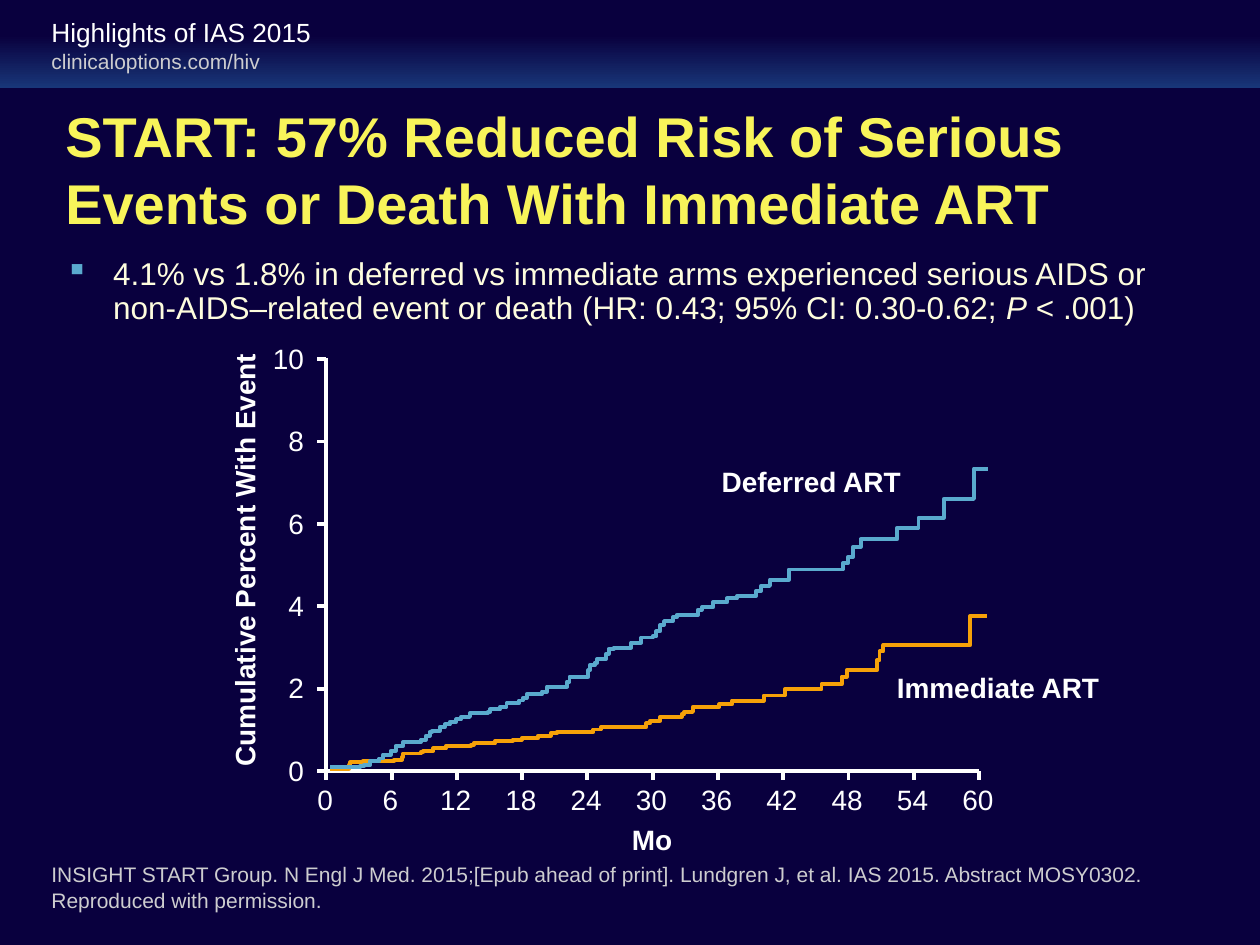
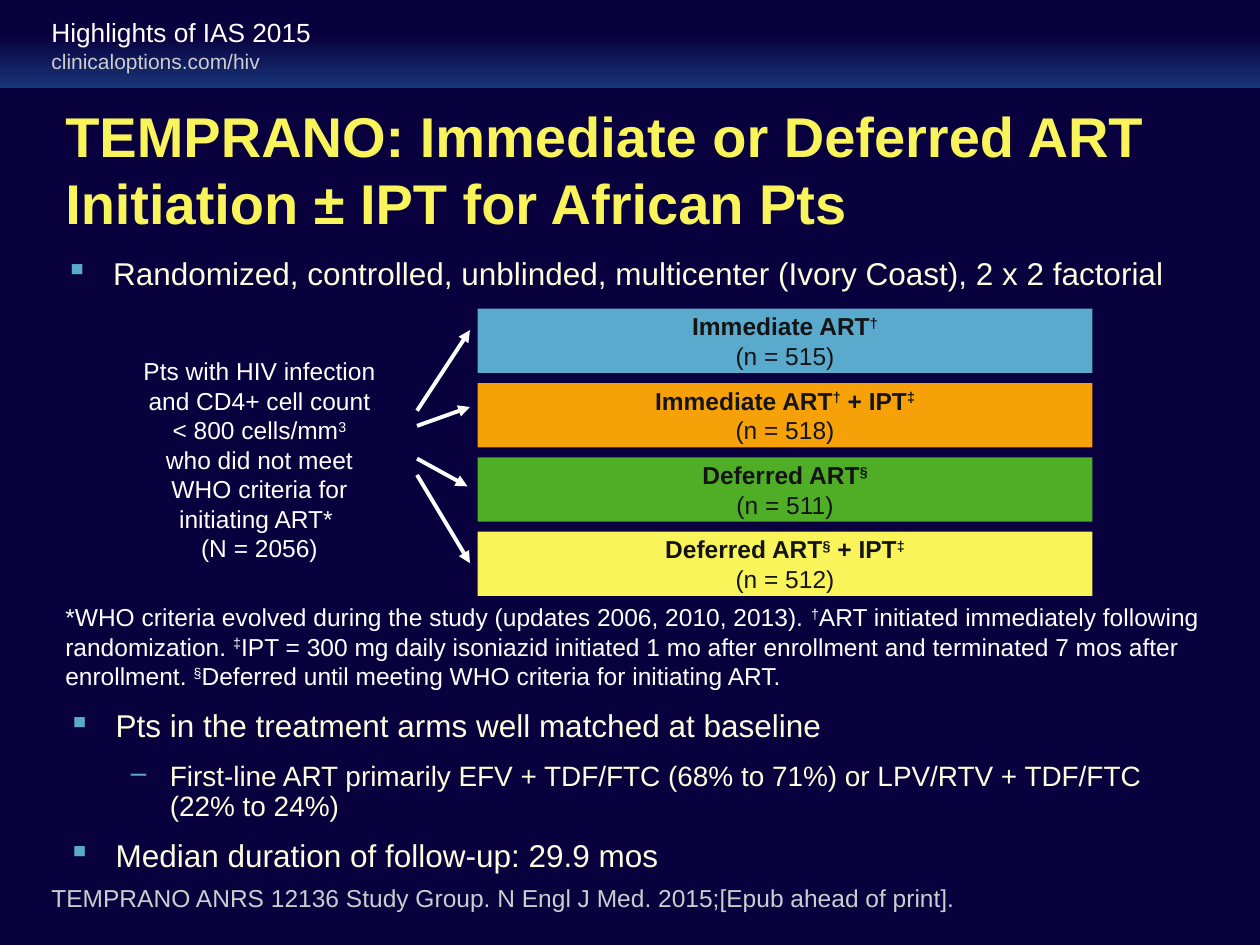
from typing import NamedTuple

from lxml import etree
from pptx import Presentation
from pptx.dml.color import RGBColor
from pptx.enum.shapes import MSO_CONNECTOR, MSO_SHAPE
from pptx.enum.text import MSO_ANCHOR, PP_ALIGN
from pptx.oxml.ns import qn
from pptx.util import Inches, Pt

# Slide grid: 100 columns by 75 rows
WIDTH, HEIGHT = Inches(10), Inches(7.5)
COLUMN, ROW = WIDTH // 100, HEIGHT // 75

FONT = "Arial"
NAVY = RGBColor(0x09, 0x00, 0x3E)
BAND_BLUE = RGBColor(0x18, 0x36, 0x78)
WHITE = RGBColor(0xFF, 0xFF, 0xFF)
CREAM = RGBColor(0xFE, 0xFD, 0xDE)
GRAY = RGBColor(0xCD, 0xCD, 0xCF)
INK = RGBColor(0x14, 0x14, 0x15)
YELLOW = RGBColor(0xF8, 0xF4, 0x5A)
BLUE = RGBColor(0x5A, 0xAA, 0xCE)
ORANGE = RGBColor(0xF6, 0xA1, 0x08)
GREEN = RGBColor(0x4F, 0xAD, 0x26)

LEFT, CENTER, RIGHT = PP_ALIGN.LEFT, PP_ALIGN.CENTER, PP_ALIGN.RIGHT
TOP, MIDDLE, BOTTOM = MSO_ANCHOR.TOP, MSO_ANCHOR.MIDDLE, MSO_ANCHOR.BOTTOM
STRAIGHT, RECTANGLE = MSO_CONNECTOR.STRAIGHT, MSO_SHAPE.RECTANGLE
LINE_WIDTH = Pt(2.25)

# Per bullet level: sign, size, text indent and hanging indent in inches
BULLETS = [("▪", 18, 0.38, -0.38), ("–", 16, 0.81, -0.31)]

# Steps of each curve: hundredths of an inch right of and above the axis origin
IMMEDIATE_STEPS = [
    (3, 2), (18, 5), (19, 7), (29, 8), (54, 9), (60, 11), (61, 14), (75, 15),
    (77, 16), (85, 18), (95, 20), (115, 21), (117, 22), (134, 24), (148, 25),
    (155, 26), (168, 28), (178, 30), (183, 31), (212, 33), (218, 35), (254, 38),
    (257, 40), (265, 43), (282, 45), (284, 47), (291, 51), (312, 53), (322, 56),
    (347, 60), (364, 65), (393, 69), (409, 75), (413, 80), (437, 88), (439, 95),
    (442, 100), (511, 123), (524, 123)]
DEFERRED_STEPS = [
    (3, 3), (27, 4), (30, 5), (35, 8), (42, 10), (45, 13), (51, 16), (55, 20),
    (61, 23), (75, 25), (79, 28), (82, 31), (84, 32), (90, 35), (94, 37),
    (98, 39), (103, 41), (107, 43), (114, 46), (128, 47), (130, 49), (138, 51),
    (143, 54), (153, 56), (156, 58), (159, 61), (171, 63), (175, 67), (191, 71),
    (193, 75), (208, 80), (209, 84), (213, 86), (215, 89), (222, 93), (224, 97),
    (228, 98), (242, 102), (250, 106), (259, 107), (262, 111), (265, 116),
    (268, 119), (275, 122), (278, 124), (295, 128), (298, 130), (307, 134),
    (318, 137), (326, 139), (341, 143), (345, 147), (352, 152), (367, 160),
    (410, 165), (414, 170), (418, 178), (424, 184), (453, 193), (470, 201),
    (490, 216), (514, 240), (525, 240)]


class Box(NamedTuple):
    """A region in columns and rows of the slide grid."""
    left: float
    top: float
    width: float
    height: float

    def region(self, across, down, width, height):
        return Box(self.left + across, self.top + down, width, height)

    def lengths(self):
        return (round(self.left * COLUMN), round(self.top * ROW),
                round(self.width * COLUMN), round(self.height * ROW))


# Text and line helpers
def style(font, size, color, bold=False):
    font.name, font.size, font.bold = FONT, Pt(size), bold
    font.color.rgb = color


def write_runs(para, spans):
    """Spans are (text, marks): b bold, i italic, ^ raised, / line break after."""
    for text, marks in [(spans, "")] if isinstance(spans, str) else spans:
        run = para.add_run()
        run.text = text
        if "b" in marks:
            run.font.bold = True
        if "i" in marks:
            run.font.italic = True
        if "^" in marks:
            run._r.get_or_add_rPr().set("baseline", "30000")
        if "/" in marks:
            para.add_line_break()


def fill_frame(frame, paragraphs, size, color, bold=False, align=LEFT,
               anchor=TOP, wrap=True):
    frame.word_wrap, frame.vertical_anchor = wrap, anchor
    for index, spans in enumerate(paragraphs):
        para = frame.add_paragraph() if index else frame.paragraphs[0]
        para.alignment = align
        style(para.font, size, color, bold)
        write_runs(para, spans)


def add_text(page, box, paragraphs, size, color, **options):
    text_box = page.shapes.add_textbox(*box.lengths())
    fill_frame(text_box.text_frame, paragraphs, size, color, **options)
    return text_box


def add_label(page, box, text, align=CENTER, bold=True):
    return add_text(page, box, [text], 16, WHITE, bold=bold, align=align, wrap=False)


def add_bullets(page, box, items):
    """Items are (level, spans)."""
    frame = page.shapes.add_textbox(*box.lengths()).text_frame
    frame.word_wrap = True
    for index, (level, spans) in enumerate(items):
        sign, size, indent, hanging = BULLETS[level]
        para = frame.add_paragraph() if index else frame.paragraphs[0]
        para.level, para.line_spacing = level, 0.9
        if index:
            para.space_before = Pt(10)
        properties = para._p.get_or_add_pPr()
        properties.set("marL", str(Inches(indent)))
        properties.set("indent", str(Inches(hanging)))
        bullet_color = etree.SubElement(properties, qn("a:buClr"))
        etree.SubElement(bullet_color, qn("a:srgbClr")).set("val", str(BLUE))
        etree.SubElement(properties, qn("a:buChar")).set("char", sign)
        style(para.font, size, CREAM)
        write_runs(para, spans)


def add_line(page, start, end, arrow=False):
    (x1, y1), (x2, y2) = start, end
    line = page.shapes.add_connector(STRAIGHT, round(x1 * COLUMN), round(y1 * ROW),
                                     round(x2 * COLUMN), round(y2 * ROW))
    line.line.color.rgb, line.line.width = WHITE, LINE_WIDTH
    properties = line._element.spPr
    etree.SubElement(properties, qn("a:effectLst"))
    if arrow:
        etree.SubElement(properties.find(qn("a:ln")), qn("a:tailEnd")).set("type", "triangle")


def add_block(page, box):
    block = page.shapes.add_shape(RECTANGLE, *box.lengths())
    block.shadow.inherit = False
    block.line.fill.background()
    return block


# Elements shared by every slide
def add_page(deck, title):
    page = deck.slides.add_slide(deck.slide_layouts[6])
    add_header(page, Box(0, 0, 100, 7))
    add_text(page, Box(4.2, 7.3, 92.6, 12.1), [title], 32, YELLOW, bold=True, anchor=MIDDLE)
    return page


def add_header(page, box):
    band = add_block(page, box)
    band.fill.gradient()
    band.fill.gradient_angle = 90
    for stop, position, color in zip(band.fill.gradient_stops, (0, 0.6), (BAND_BLUE, NAVY)):
        stop.position, stop.color.rgb = position, color
    add_text(page, box.region(3.1, 3.4, 18.7, 3), ["clinicaloptions.com/hiv"], 12, GRAY, wrap=False)
    add_text(page, box.region(3.1, 0.8, 78.4, 3.5), ["Highlights of IAS 2015"], 15, WHITE)


def add_citation(page, text, size, height):
    add_text(page, Box(3.1, 72.9 - height, 93.6, height), [text], size, GRAY, anchor=BOTTOM)


# Event plot: axes, ticks, labels and step curves
def add_curve(page, box, steps, color):
    (start_x, start_y), *rest = steps
    builder = page.shapes.build_freeform(start_x, -start_y, scale=COLUMN / 10)
    points, height = [], start_y
    for across, new_height in rest:
        points += [(across, -height), (across, -new_height)]
        height = new_height
    builder.add_line_segments(points, close=False)
    curve = builder.convert_to_shape(round(box.left * COLUMN),
                                     round((box.top + box.height) * ROW))
    curve.shadow.inherit = False
    curve.fill.background()
    curve.line.color.rgb, curve.line.width = color, LINE_WIDTH


def add_event_plot(page, box):
    left, bottom = box.left, box.top + box.height
    add_line(page, (left, box.top - 0.1), (left, bottom + 0.1))
    add_line(page, (left, bottom), (left + box.width, bottom))
    for percent in range(0, 11, 2):
        rise = box.height * (1 - percent / 10)
        add_line(page, (left - 0.7, box.top + rise), (left, box.top + rise))
        width = 4.5 if percent > 9 else 3.3
        add_label(page, box.region(-0.8 - width, rise - 1.9, width, 3.7), str(percent), RIGHT, False)
    for month in range(0, 61, 6):
        shift = box.width * month / 60
        add_line(page, (left + shift, bottom), (left + shift, bottom + 0.7))
        width = 4.5 if month > 9 else 3.3
        add_label(page, box.region(shift - 0.1 - width / 2, box.height + 0.4, width, 3.7),
                  str(month), bold=False)
    axis_title = add_label(page, box.region(-24.1, 14.1, 35.2, 3.7), "Cumulative Percent With Event")
    axis_title.rotation = 270
    add_label(page, box.region(23.2, 36.3, 5.3, 3.7), "Mo")
    add_label(page, box.region(30.4, 7.9, 16.4, 3.7), "Deferred ART", LEFT)
    add_label(page, box.region(44.3, 24.2, 18.3, 3.7), "Immediate ART", LEFT)
    add_curve(page, box, IMMEDIATE_STEPS, ORANGE)
    add_curve(page, box, DEFERRED_STEPS, BLUE)


# Trial design: population, arrows and four arms
def add_trial_arms(page, box):
    population = [[("Pts with HIV infection and CD4+ cell count < 800 cells/mm", ""), ("3", "^")],
                  "who did not meet WHO criteria for initiating ART* ", "(N = 2056)"]
    add_text(page, box.region(0, 3.3, 21, 17.5), population, 14, WHITE, align=CENTER)
    ipt = [(" + IPT", "b"), ("‡", "b^/")]
    arms = [
        (BLUE, [("Immediate ART", "b"), ("†", "b^/")], 515),
        (ORANGE, [("Immediate ART", "b"), ("†", "b^"), *ipt], 518),
        (GREEN, [("Deferred ART", "b"), ("§", "b^/")], 511),
        (YELLOW, [("Deferred ART", "b"), ("§", "b^"), *ipt], 512)]
    for row, (color, name, count) in enumerate(arms):
        arm = add_block(page, box.region(27.8, row * 5.9, 48.8, 5.1))
        arm.fill.solid()
        arm.fill.fore_color.rgb = color
        fill_frame(arm.text_frame, [[*name, (f"(n = {count})", "")]], 14, INK,
                   align=CENTER, anchor=MIDDLE, wrap=False)
    for start, end_x, end in [(8.1, 27.2, 1.7), (9.3, 27.2, 7.8),
                              (11.9, 27, 14.1), (13.2, 27.2, 20.2)]:
        add_line(page, (box.left + 23, box.top + start),
                 (box.left + end_x, box.top + end), arrow=True)


# Slides
def add_start_slide(deck):
    page = add_page(deck, "START: 57% Reduced Risk of Serious Events or Death With Immediate ART")
    add_bullets(page, Box(4.2, 20, 92.5, 7), [(0, [
        ("4.1% vs 1.8% in deferred vs immediate arms experienced serious AIDS or "
         "non-AIDS–related event or death (HR: 0.43; 95% CI: 0.30-0.62; ", ""),
        ("P", "i"), (" < .001)", "")])])
    add_event_plot(page, Box(25.9, 28.5, 51.8, 32.7))
    add_citation(page, "INSIGHT START Group. N Engl J Med. 2015;[Epub ahead of print]. "
                 "Lundgren J, et al. IAS 2015. Abstract MOSY0302. "
                 "Reproduced with permission.", 12, 5.1)


def add_temprano_slide(deck):
    page = add_page(deck, "TEMPRANO: Immediate or Deferred ART Initiation ± IPT for African Pts")
    add_bullets(page, Box(4.2, 20, 95.8, 4), [
        (0, "Randomized, controlled, unblinded, multicenter (Ivory Coast), 2 x 2 factorial")])
    add_trial_arms(page, Box(10.1, 24.5, 76.6, 22.8))
    add_text(page, Box(4.2, 47.3, 92.7, 8.1), [[
        ("*WHO criteria evolved during the study (updates 2006, 2010, 2013). ", ""),
        ("†", "^"), ("ART initiated immediately following randomization. ", ""),
        ("‡", "^"), ("IPT = 300 mg daily isoniazid initiated 1 mo after enrollment "
                     "and terminated 7 mos after enrollment. ", ""),
        ("§", "^"), ("Deferred until meeting WHO criteria for initiating ART.", "")]], 14, WHITE)
    add_citation(page, "TEMPRANO ANRS 12136 Study Group. N Engl J Med. 2015;"
                 "[Epub ahead of print].", 14, 3.4)
    add_bullets(page, Box(4.4, 55.9, 92.6, 13.9), [
        (0, "Pts in the treatment arms well matched at baseline"),
        (1, "First-line ART primarily EFV + TDF/FTC (68% to 71%) or "
            "LPV/RTV + TDF/FTC (22% to 24%)"),
        (0, "Median duration of follow-up: 29.9 mos")])


def main():
    deck = Presentation()
    deck.slide_width, deck.slide_height = WIDTH, HEIGHT
    background = deck.slide_master.background.fill
    background.solid()
    background.fore_color.rgb = NAVY
    add_start_slide(deck)
    add_temprano_slide(deck)
    deck.save("out.pptx")


if __name__ == "__main__":
    main()
